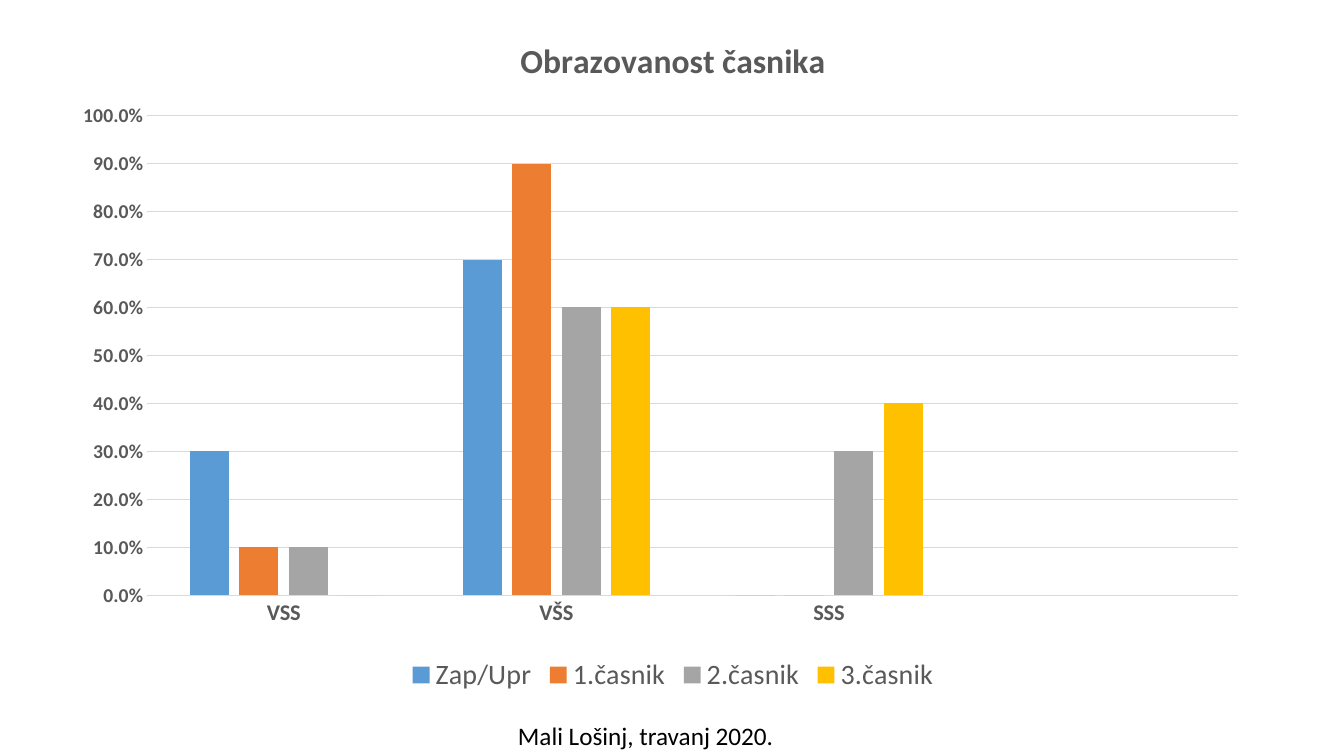
from lxml import etree
from pptx import Presentation
from pptx.chart.data import CategoryChartData
from pptx.dml.color import RGBColor
from pptx.enum.chart import XL_CHART_TYPE as ChartType
from pptx.enum.chart import XL_LEGEND_POSITION as LegendPosition
from pptx.enum.chart import XL_TICK_MARK as TickMark
from pptx.enum.text import MSO_AUTO_SIZE as AutoSize
from pptx.oxml.ns import qn
from pptx.util import Emu, Pt

BLACK = RGBColor(0x00, 0x00, 0x00)
TEXT_GRAY = RGBColor(0x59, 0x59, 0x59)
LINE_GRAY = RGBColor(0xD9, 0xD9, 0xD9)
BLUE = RGBColor(0x5B, 0x9B, 0xD5)
ORANGE = RGBColor(0xED, 0x7D, 0x31)
GRAY = RGBColor(0xA5, 0xA5, 0xA5)
YELLOW = RGBColor(0xFF, 0xC0, 0x00)

EMU_PER_PX = 914400 / 100.8
SHARE_FORMAT = "0.0%"
# The fourth category is an empty slot at the right of the plot.
EDUCATION_LEVELS = ["VSS", "VŠS", "SSS", ""]
OFFICERS = [
    ("Zap/Upr", BLUE, (0.3, 0.7, 0, None)),
    ("1.časnik", ORANGE, (0.1, 0.9, 0, None)),
    ("2.časnik", GRAY, (0.1, 0.6, 0.3, None)),
    ("3.časnik", YELLOW, (0, 0.6, 0.4, None)),
]


def px(length):
    return Emu(round(length * EMU_PER_PX))


class SlideBuilder:
    def __init__(self, slide, font_name):
        self.slide = slide
        self.font_name = font_name

    def style_font(self, font, size, color=TEXT_GRAY, bold=False):
        font.name = self.font_name
        font.size = Pt(size)
        font.bold = bold
        font.color.rgb = color

    def add_text(self, text, left, top, width, height, **font_format):
        box = self.slide.shapes.add_textbox(px(left), px(top), px(width), px(height))
        frame = box.text_frame
        frame.word_wrap = False
        frame.auto_size = AutoSize.SHAPE_TO_FIT_TEXT
        span = frame.paragraphs[0].add_run()
        span.text = text
        self.style_font(span.font, **font_format)

    def add_column_chart(self, title, categories, series, left, top, width, height):
        data = CategoryChartData(number_format=SHARE_FORMAT)
        data.categories = categories
        for name, _, values in series:
            data.add_series(name, values)
        chart = self.slide.shapes.add_chart(
            ChartType.COLUMN_CLUSTERED, px(left), px(top), px(width), px(height), data
        ).chart
        self.style_font(chart.font, 10, BLACK)

        chart.has_title = True
        span = chart.chart_title.text_frame.paragraphs[0].add_run()
        span.text = title
        self.style_font(span.font, 24, bold=True)

        chart.has_legend = True
        chart.legend.position = LegendPosition.BOTTOM
        chart.legend.include_in_layout = False
        self.style_font(chart.legend.font, 20)

        plot = chart.plots[0]
        plot.gap_width = 219
        plot.overlap = -27
        plot.vary_by_categories = False
        for column, (_, color, _) in zip(plot.series, series):
            column.format.fill.solid()
            column.format.fill.fore_color.rgb = color
            column.invert_if_negative = False

        self.style_axes(chart)
        return chart

    def style_axes(self, chart):
        for axis, size in ((chart.category_axis, 16), (chart.value_axis, 14)):
            axis.major_tick_mark = TickMark.NONE
            axis.minor_tick_mark = TickMark.NONE
            self.style_font(axis.tick_labels.font, size, bold=True)

        shares = chart.value_axis
        shares.minimum_scale, shares.maximum_scale, shares.major_unit = 0, 1, 0.1
        shares.tick_labels.number_format = SHARE_FORMAT
        shares.tick_labels.number_format_is_linked = False
        shares.format.line.fill.background()
        shares.has_major_gridlines = True
        for line in (chart.category_axis.format.line, shares.major_gridlines.format.line):
            line.color.rgb = LINE_GRAY
            line.width = Pt(0.75)

    def place_plot(self, chart, **fractions):
        """Fix the inner plot area as x, y, w, h fractions of the chart."""
        plot_area = chart.element.find(".//" + qn("c:plotArea")) if hasattr(
            chart, "element") else chart._chartSpace.find(".//" + qn("c:plotArea"))
        for layout in plot_area.findall(qn("c:layout")):
            plot_area.remove(layout)
        layout = etree.Element(qn("c:layout"))
        plot_area.insert(0, layout)
        manual = etree.SubElement(layout, qn("c:manualLayout"))
        settings = {"layoutTarget": "inner", "xMode": "edge", "yMode": "edge", **fractions}
        for name, value in settings.items():
            etree.SubElement(manual, qn("c:" + name)).set("val", str(value))


def main():
    deck = Presentation()
    deck.slide_width, deck.slide_height = px(1344), px(756)
    page = SlideBuilder(deck.slides.add_slide(deck.slide_layouts[6]), "Calibri")
    chart = page.add_column_chart(
        "Obrazovanost časnika", EDUCATION_LEVELS, OFFICERS, 16, 13, 1314, 685
    )
    page.place_plot(chart, x=0.1, y=0.15, w=0.83, h=0.7)
    page.add_text("Mali Lošinj, travanj 2020.", 508, 715, 278, 40, size=18, color=BLACK)
    deck.save("out.pptx")


if __name__ == "__main__":
    main()
